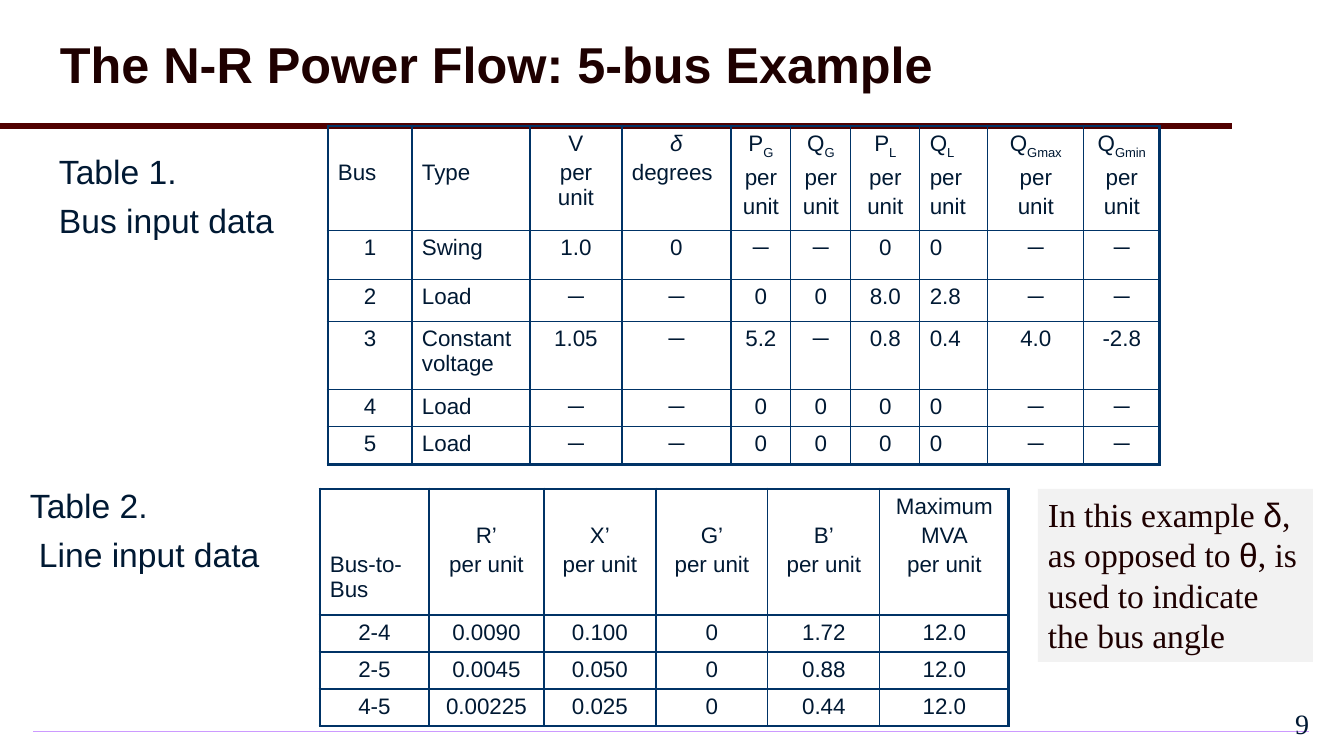
from lxml import etree
from pptx import Presentation, util as u
from pptx.dml.color import RGBColor
from pptx.enum import shapes, text
from pptx.oxml.ns import qn

PX = 914400 / 100.8
NAVY = RGBColor(0x00, 0x19, 0x33)
BORDER = RGBColor(0x00, 0x33, 0x66)
MAROON = RGBColor(0x1E, 0x00, 0x00)
RULE = RGBColor(0x50, 0x00, 0x00)
PALE = RGBColor(0xF2, 0xF2, 0xF2)
LILAC = RGBColor(0xCC, 0x99, 0xFF)
LIGHT_LILAC = RGBColor(0xF3, 0xEB, 0xFF)
LEFT, CENTER, RIGHT = text.PP_ALIGN.LEFT, text.PP_ALIGN.CENTER, text.PP_ALIGN.RIGHT


def px(*lengths):
    return [u.Emu(round(length * PX)) for length in lengths]


def style(paragraph, size, color, name="Arial", bold=False, align=LEFT):
    paragraph.alignment = align
    font = paragraph.font
    font.size, font.name, font.bold = u.Pt(size), name, bold
    font.color.rgb = color


presentation = Presentation()
presentation.slide_width, presentation.slide_height = px(1344, 756)
slide = presentation.slides.add_slide(presentation.slide_layouts[6])

footer_bar = slide.shapes.add_shape(shapes.MSO_SHAPE.RECTANGLE, *px(33, 731, 1276, 1))
footer_bar.shadow.inherit = False
footer_bar.line.fill.background()
footer_bar.fill.gradient()
for stop, color in zip(footer_bar.fill.gradient_stops, (LILAC, LIGHT_LILAC)):
    stop.color.rgb = color
gradient = footer_bar._element.spPr.find(qn("a:gradFill"))
gradient.remove(gradient.find(qn("a:lin")))
shade = etree.SubElement(gradient, qn("a:path"), path="shape")
etree.SubElement(shade, qn("a:fillToRect"), l="50000", t="50000", r="50000", b="50000")

title_rule = slide.shapes.add_connector(shapes.MSO_CONNECTOR.STRAIGHT, *px(0, 126, 1232, 126))
title_rule.line.color.rgb = RULE
title_rule.line.width = u.Pt(4)
etree.SubElement(title_rule._element.spPr, qn("a:effectLst"))

title = slide.shapes.add_textbox(*px(50, 8, 1232, 118)).text_frame
title.word_wrap = True
title.vertical_anchor = text.MSO_ANCHOR.MIDDLE
title.text = "The N-R Power Flow: 5-bus Example"
title.paragraphs[0].line_spacing = 0.9
style(title.paragraphs[0], 36, MAROON, bold=True)

captions = [
    (59, 151, 0, ["Table 1.", "Bus input data"]),
    (30, 485, 9, ["Table 2.", "Line input data"]),
]
for left, top, indent, lines in captions:
    caption = slide.shapes.add_textbox(*px(left, top, 240, 90)).text_frame
    caption.word_wrap = True
    caption.margin_left = caption.margin_top = caption.margin_right = caption.margin_bottom = 0
    caption.text = "\n".join(lines)
    for paragraph in caption.paragraphs:
        style(paragraph, 24, NAVY)
    caption.paragraphs[1].space_before = u.Pt(6)
    caption.paragraphs[1]._p.get_or_add_pPr().set("marL", str(px(indent)[0]))

bus_rows = [
    ["Bus", "Type", "V\nper unit", "δ\ndegrees"]
    + [f"{name}\nper\nunit" for name in ("P_G", "Q_G", "P_L", "Q_L", "Q_Gmax", "Q_Gmin")],
    "1 Swing 1.0 0 ─ ─ 0 0 ─ ─".split(),
    "2 Load ─ ─ 0 0 8.0 2.8 ─ ─".split(),
    ["3", "Constant voltage", "1.05", "─", "5.2", "─", "0.8", "0.4", "4.0", "-2.8"],
    "4 Load ─ ─ 0 0 0 0 ─ ─".split(),
    "5 Load ─ ─ 0 0 0 0 ─ ─".split(),
]
line_rows = [
    ["Bus-to-Bus"] + [f"{name}’\nper unit" for name in "RXGB"] + ["Maximum\nMVA\nper unit"],
    "2-4 0.0090 0.100 0 1.72 12.0".split(),
    "2-5 0.0045 0.050 0 0.88 12.0".split(),
    "4-5 0.00225 0.025 0 0.44 12.0".split(),
]
tables = [
    (328, 126, [84, 118, 92, 109, 60, 60, 69, 68, 96, 76], [104, 49, 42, 68, 37, 38],
     bus_rows, {1, 7}, [29, 29]),
    (320, 489, [109, 115, 112, 112, 112, 129], [126, 37, 37, 37],
     line_rows, set(), [58, 29, 29, 29, 29]),
]
for left, top, widths, heights, rows, left_columns, header_drops in tables:
    frame = slide.shapes.add_table(len(rows), len(widths), *px(left, top, sum(widths), sum(heights)))
    table = frame.table
    table.first_row = table.horz_banding = False
    for column, width in zip(table.columns, px(*widths)):
        column.width = width
    for row, height in zip(table.rows, px(*heights)):
        row.height = height
    last_row, last_column = len(rows) - 1, len(widths) - 1
    for r, values in enumerate(rows):
        for c, value in enumerate(values):
            cell = table.cell(r, c)
            drop = header_drops[c] if r == 0 and c < len(header_drops) else 0
            cell.margin_left, cell.margin_right, cell.margin_top, cell.margin_bottom = px(10, 10, 5 + drop, 5)
            cell.fill.background()
            outer = {"L": c == 0, "R": c == last_column, "T": r == 0, "B": r == last_row}
            for place, (side, is_outer) in enumerate(outer.items()):
                edge = etree.Element(qn(f"a:ln{side}"), w=str(u.Pt(2.25 if is_outer else 1)))
                fill = etree.SubElement(edge, qn("a:solidFill"))
                etree.SubElement(fill, qn("a:srgbClr"), val=str(BORDER))
                cell._tc.tcPr.insert(place, edge)
            for i, line in enumerate(value.split("\n")):
                paragraph = cell.text_frame.paragraphs[0] if i == 0 else cell.text_frame.add_paragraph()
                at_left = c in left_columns or (r == c == 0) or line == "degrees"
                style(paragraph, 16, NAVY, align=LEFT if at_left else CENTER)
                paragraph.font.italic = line == "δ"
                if i:
                    paragraph.space_before = u.Pt(3.2)
                symbol, _, subscript = line.partition("_")
                paragraph.add_run().text = symbol
                if subscript:
                    run = paragraph.add_run()
                    run.text = subscript
                    run.font._element.set("baseline", "-30000")

note = slide.shapes.add_shape(shapes.MSO_SHAPE.RECTANGLE, *px(1038, 489, 275, 173))
note.shadow.inherit = False
note.fill.solid()
note.fill.fore_color.rgb = PALE
note.line.fill.background()
note.text_frame.word_wrap = True
note.text_frame.vertical_anchor = text.MSO_ANCHOR.TOP
paragraph = note.text_frame.paragraphs[0]
style(paragraph, 24, MAROON, "Times New Roman")
for words in ("In this example ", "δ", ", as opposed to ", "θ", ", is used to indicate the bus angle"):
    run = paragraph.add_run()
    run.text = words
    run.font.color.rgb = MAROON
    run.font.name = "Arial" if words in "δθ" else "Times New Roman"

page_number = slide.shapes.add_textbox(*px(1252, 698, 67, 50)).text_frame
page_number.vertical_anchor = text.MSO_ANCHOR.MIDDLE
page_number.word_wrap = True
page_number.text = "9"
style(page_number.paragraphs[0], 20, NAVY, "Times New Roman", align=RIGHT)

presentation.save("out.pptx")
